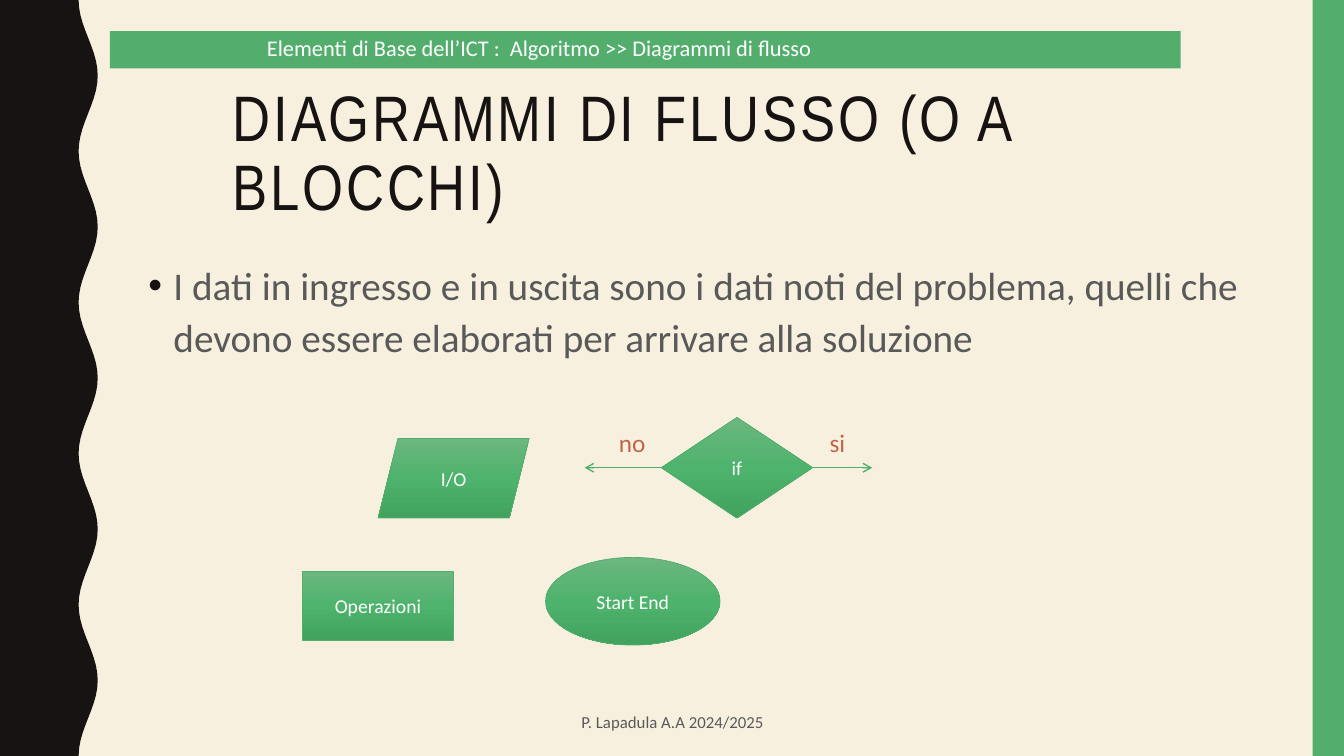
import copy
import math

from lxml import etree
from pptx import Presentation
from pptx import util as u
from pptx.dml.color import RGBColor
from pptx.enum import shapes, text
from pptx.oxml.ns import qn

CREAM = RGBColor(0xF7, 0xF0, 0xDF)
INK = RGBColor(0x17, 0x13, 0x12)
GREEN = RGBColor(0x53, 0xAE, 0x6E)
GREY = RGBColor(0x59, 0x59, 0x59)
RUST = RGBColor(0xBF, 0x65, 0x46)
WHITE = RGBColor(0xFF, 0xFF, 0xFF)
SHADES = (RGBColor(0x6C, 0xB7, 0x80), RGBColor(0x4E, 0xB3, 0x6C), RGBColor(0x42, 0xA3, 0x5E))
KIND = shapes.MSO_SHAPE
LEFT, CENTER = text.PP_ALIGN.LEFT, text.PP_ALIGN.CENTER
TOP, MIDDLE = text.MSO_ANCHOR.TOP, text.MSO_ANCHOR.MIDDLE


class Deck:
    """Slide style and element builders; lengths are percentages of the slide's size."""

    def __init__(self, width, height):
        self.prs = Presentation()
        self.prs.slide_width, self.prs.slide_height = u.Inches(width), u.Inches(height)
        self.slide = self.prs.slides.add_slide(self.prs.slide_layouts[1])
        self.slide.background.fill.solid()
        self.slide.background.fill.fore_color.rgb = CREAM

    def x(self, share):
        return round(self.prs.slide_width * share / 100)

    def y(self, share):
        return round(self.prs.slide_height * share / 100)

    def box(self, left, top, width, height):
        return self.x(left), self.y(top), self.x(width), self.y(height)

    def add_text(self, sp, words, size, color, font="Calibri", align=LEFT, anchor=TOP):
        tf = sp.text_frame
        tf.word_wrap = True
        tf.auto_size = text.MSO_AUTO_SIZE.NONE
        tf.vertical_anchor = anchor
        p = tf.paragraphs[0]
        p.alignment = align
        p.space_before = u.Pt(0)
        r = p.add_run()
        r.text = words
        r.font.name, r.font.size = font, u.Pt(size)
        r.font.color.rgb = color
        return p, r

    def paint(self, sp, color):
        sp.shadow.inherit = False
        sp.fill.solid()
        sp.fill.fore_color.rgb = color
        sp.line.fill.background()

    def band(self, *area):
        self.paint(self.slide.shapes.add_shape(KIND.RECTANGLE, *self.box(*area)), GREEN)

    def wave(self, middle, swing, period):
        edge = [(self.x(middle - swing * math.cos(math.tau * t / period)), self.y(t))
                for t in range(101)]
        builder = self.slide.shapes.build_freeform(0, 0)
        builder.add_line_segments(edge + [(0, self.y(100))], close=True)
        self.paint(builder.convert_to_shape(), INK)

    def place(self, sp, area):
        sp.left, sp.top, sp.width, sp.height = self.box(*area)
        return sp

    def title(self, words, *area):
        sp = self.place(self.slide.shapes.title, area)
        p, r = self.add_text(sp, words, 45.9, INK, "Arial Narrow")
        p.line_spacing = 0.9
        r.font._element.set("spc", "200")

    def bullet(self, words, *area):
        sp = self.place(self.slide.placeholders[1], area)
        p, r = self.add_text(sp, words, 28, GREY)
        p.line_spacing = 1.1
        pPr = p._p.get_or_add_pPr()
        pPr.set("marL", str(u.Inches(0.25)))
        pPr.set("indent", str(-u.Inches(0.25)))
        color = etree.SubElement(pPr, qn("a:buClr"))
        etree.SubElement(color, qn("a:srgbClr"), val=str(INK))
        etree.SubElement(pPr, qn("a:buFont"), typeface="Arial")
        etree.SubElement(pPr, qn("a:buChar"), char="•")

    def label(self, words, size, color, *area, **style):
        self.add_text(self.slide.shapes.add_textbox(*self.box(*area)), words, size, color, **style)

    def block(self, kind, words, *area):
        sp = self.slide.shapes.add_shape(kind, *self.box(*area))
        sp.shadow.inherit = False
        sp.fill.gradient()
        sp.fill.gradient_angle = 270
        stops = sp._element.spPr.find(".//" + qn("a:gsLst"))
        stops.insert(1, copy.deepcopy(stops[0]))
        for i, (stop, shade) in enumerate(zip(sp.fill.gradient_stops, SHADES)):
            stop.position, stop.color.rgb = i / 2, shade
        sp.line.color.rgb, sp.line.width = GREEN, u.Pt(0.5)
        self.add_text(sp, words, 14, WHITE, align=CENTER, anchor=MIDDLE)

    def arrow(self, start, end, level):
        cx = self.slide.shapes.add_connector(
            shapes.MSO_CONNECTOR.STRAIGHT, self.x(start), self.y(level), self.x(end), self.y(level))
        cx.line.color.rgb, cx.line.width = GREEN, u.Pt(1)
        spPr = cx._element.spPr
        etree.SubElement(spPr.find(qn("a:ln")), qn("a:tailEnd"), type="arrow")
        etree.SubElement(spPr, qn("a:effectLst"))


def main():
    deck = Deck(13.33, 7.5)
    deck.wave(6.56, 0.71, 20)
    deck.band(97.67, 0, 2.33, 100)
    deck.band(8.18, 4.13, 79.67, 4.93)
    deck.title("DIAGRAMMI DI FLUSSO (O A BLOCCHI)", 16.58, 10.67, 61.97, 16.27)
    deck.bullet("I dati in ingresso e in uscita sono i dati noti del problema, quelli che devono "
                "essere elaborati per arrivare alla soluzione", 10.28, 33.33, 83.5, 52.4)
    deck.label("P. Lapadula A.A 2024/2025", 12, GREY, 33.16, 92.93, 33.76, 5.07,
               align=CENTER, anchor=MIDDLE)
    deck.label("Elementi di Base dell’ICT :  Algoritmo >> Diagrammi di flusso", 16, WHITE,
               19.13, 3.87, 65.72, 4.93)

    deck.block(KIND.PARALLELOGRAM, "I/O", 28.13, 58, 11.25, 10.53)
    deck.block(KIND.DIAMOND, "if", 49.21, 55.2, 11.25, 13.33)
    deck.block(KIND.OVAL, "Start End", 40.59, 73.73, 12.98, 11.6)
    deck.block(KIND.RECTANGLE, "Operazioni", 22.5, 75.6, 11.25, 9.07)
    for answer, left, start, end in (("no", 45.31, 49.21, 43.5), ("si", 60.99, 60.5, 64.9)):
        deck.arrow(start, end, 61.87)
        deck.label(answer, 18, RUST, left, 55.87, 4.13, 5.33)
    deck.prs.save("out.pptx")


if __name__ == "__main__":
    main()
